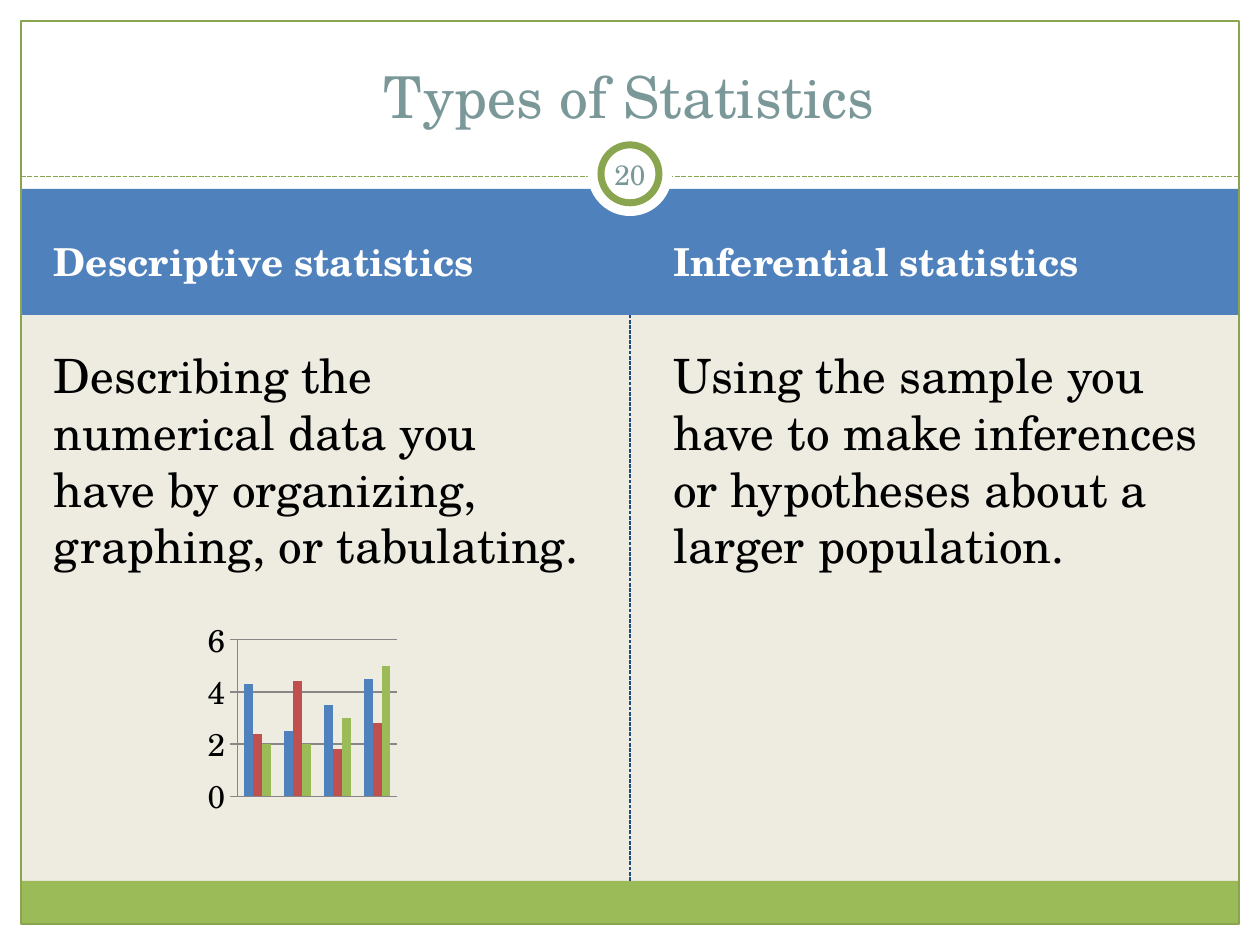
import dataclasses
import typing

import lxml.etree
import pptx
import pptx.chart.data
import pptx.dml.color
import pptx.enum.chart
import pptx.enum.dml
import pptx.enum.shapes
import pptx.enum.text
import pptx.oxml
import pptx.oxml.ns
import pptx.util

RGB = pptx.dml.color.RGBColor
Pt = pptx.util.Pt
Kind = pptx.enum.shapes.MSO_SHAPE
Align = pptx.enum.text.PP_ALIGN
Anchor = pptx.enum.text.MSO_ANCHOR

CREAM = RGB(0xEE, 0xEC, 0xE1)
WHITE = RGB(0xFF, 0xFF, 0xFF)
BLACK = RGB(0, 0, 0)
BLUE = RGB(0x4F, 0x81, 0xBD)
RED = RGB(0xC0, 0x50, 0x4D)
GREEN = RGB(0x9B, 0xBB, 0x59)
OLIVE = RGB(0x89, 0xA5, 0x4F)
NAVY = RGB(0x1F, 0x49, 0x7D)
TEAL = RGB(0x7B, 0x98, 0x99)
GREY = RGB(0x87, 0x87, 0x87)
FONT = "TeX Gyre Schola"

# The grid has 100 columns and 75 rows of square cells.
WIDE, HIGH = pptx.util.Inches(10), pptx.util.Inches(7.5)
COLS, ROWS = 100, 75
EDGE = 1.67
SPAN = COLS - 2 * EDGE
RULE, BAND, BODY, FOOT = 14, 15, 25, 69.9


@dataclasses.dataclass
class Box:
    col: float
    row: float
    cols: float
    rows: float

    def place(self) -> tuple[int, int, int, int]:
        return (col(self.col), row(self.row), col(self.cols), row(self.rows))


@dataclasses.dataclass
class Form:
    box: Box
    fill: typing.Optional[RGB] = None
    line: typing.Optional[RGB] = None
    width: float = 0.75
    kind: Kind = Kind.RECTANGLE


@dataclasses.dataclass
class Label:
    box: Box
    text: str
    size: float
    color: RGB
    bold: bool = False
    align: Align = Align.LEFT
    anchor: Anchor = Anchor.TOP
    inset: float = 1
    before: float = 0


def col(count: float) -> int:
    return round(WIDE * count / COLS)


def row(count: float) -> int:
    return round(HIGH * count / ROWS)


def ring(size: float, mid: float) -> Box:
    """Square centred across the slide, with its middle at row mid."""
    return Box((COLS - size) / 2, mid - size / 2, size, size)


def draw_form(slide, form: Form):
    shape = slide.shapes.add_shape(form.kind, *form.box.place())
    shape.shadow.inherit = False
    if form.fill is None:
        shape.fill.background()
    else:
        shape.fill.solid()
        shape.fill.fore_color.rgb = form.fill
    if form.line is None:
        shape.line.fill.background()
    else:
        shape.line.color.rgb = form.line
        shape.line.width = Pt(form.width)
    return shape


def draw_dash(slide, start: tuple, end: tuple, color: RGB, width: float):
    line = slide.shapes.add_connector(
        pptx.enum.shapes.MSO_CONNECTOR.STRAIGHT,
        col(start[0]), row(start[1]), col(end[0]), row(end[1]))
    line.line.color.rgb = color
    line.line.width = Pt(width)
    line.line.dash_style = pptx.enum.dml.MSO_LINE.SQUARE_DOT
    lxml.etree.SubElement(line.element.spPr, pptx.oxml.ns.qn("a:effectLst"))
    return line


def draw_label(slide, label: Label) -> None:
    frame = slide.shapes.add_textbox(*label.box.place()).text_frame
    frame.word_wrap = True
    frame.vertical_anchor = label.anchor
    frame.margin_left = frame.margin_right = col(label.inset)
    frame.margin_top = frame.margin_bottom = row(0.5)
    para = frame.paragraphs[0]
    para.alignment = label.align
    para.space_before = Pt(label.before)
    run = para.add_run()
    run.text = label.text
    run.font.name = FONT
    run.font.size = Pt(label.size)
    run.font.bold = label.bold
    run.font.color.rgb = label.color


def draw_chart(slide, box: Box, plot: Box) -> None:
    """Add the column chart; plot gives the inner plot area as shares of box."""
    data = pptx.chart.data.CategoryChartData()
    data.categories = ["1", "2", "3", "4"]
    data.add_series("Series 1", (4.3, 2.5, 3.5, 4.5))
    data.add_series("Series 2", (2.4, 4.4, 1.8, 2.8))
    data.add_series("Series 3", (2, 2, 3, 5))
    chart = slide.shapes.add_chart(
        pptx.enum.chart.XL_CHART_TYPE.COLUMN_CLUSTERED, *box.place(), data).chart
    chart.has_legend = chart.has_title = False
    chart.font.name = FONT
    chart.font.size = Pt(18)
    chart.font.color.rgb = BLACK
    chart.category_axis.visible = False
    axis = chart.value_axis
    axis.minimum_scale, axis.maximum_scale, axis.major_unit = 0, 6, 2
    axis.major_tick_mark = pptx.enum.chart.XL_TICK_MARK.OUTSIDE
    axis.has_major_gridlines = True
    for line in (axis.format.line, axis.major_gridlines.format.line):
        line.color.rgb = GREY
        line.width = Pt(0.75)
    bars = chart.plots[0]
    bars.gap_width = 150
    bars.vary_by_categories = False
    for series, color in zip(bars.series, (BLUE, RED, GREEN)):
        series.format.fill.solid()
        series.format.fill.fore_color.rgb = color
    area = chart.element.chart.plotArea
    for old in area.findall(pptx.oxml.ns.qn("c:layout")):
        area.remove(old)
    area.insert(0, pptx.oxml.parse_xml(
        f'<c:layout {pptx.oxml.ns.nsdecls("c")}><c:manualLayout>'
        '<c:layoutTarget val="inner"/><c:xMode val="edge"/><c:yMode val="edge"/>'
        f'<c:x val="{plot.col}"/><c:y val="{plot.row}"/>'
        f'<c:w val="{plot.cols}"/><c:h val="{plot.rows}"/>'
        '</c:manualLayout></c:layout>'))


def main() -> None:
    deck = pptx.Presentation()
    deck.slide_width, deck.slide_height = WIDE, HIGH
    slide = deck.slides.add_slide(deck.slide_layouts[6])
    slide.background.fill.solid()
    slide.background.fill.fore_color.rgb = CREAM

    for box in (Box(0, 0, COLS, 15.8), Box(0, ROWS - EDGE, COLS, EDGE),
                Box(0, 0, EDGE, ROWS), Box(COLS - EDGE, 0, EDGE, ROWS)):
        draw_form(slide, Form(box, WHITE))
    band = draw_form(slide, Form(Box(EDGE, BAND, SPAN, BODY - BAND), BLUE))
    foot = draw_form(slide, Form(Box(EDGE, FOOT, SPAN, ROWS - EDGE - FOOT), GREEN))
    split = draw_dash(slide, (COLS / 2, FOOT), (COLS / 2, BODY), NAVY, 0.75)
    split.begin_connect(foot, 0)
    split.end_connect(band, 2)
    draw_dash(slide, (EDGE, RULE), (COLS - EDGE, RULE), OLIVE, 0.9)
    draw_form(slide, Form(Box(EDGE, EDGE, SPAN, ROWS - 2 * EDGE), None, OLIVE))
    draw_form(slide, Form(ring(6.7, 13.8), WHITE, kind=Kind.OVAL))
    draw_form(slide, Form(ring(4.6, 13.8), WHITE, OLIVE, 4, Kind.OVAL))

    sides = (
        ("Descriptive statistics", "Describing the numerical data you have by "
         "organizing, graphing, or tabulating."),
        ("Inferential statistics", "Using the sample you have to make inferences "
         "or hypotheses about a larger population."))
    for left, (head, text) in zip((3.3, 52.45), sides):
        draw_label(slide, Label(Box(left, 16.7, 44.2, 8), head, 22, WHITE, True,
                                anchor=Anchor.MIDDLE, before=4.4))
        draw_label(slide, Label(Box(left, 27, 44.2, 41.8), text, 27, BLACK, before=5.4))
    draw_label(slide, Label(Box(3.3, 2.5, 93.3, 8.3), "Types of Statistics", 33, TEAL,
                            align=Align.CENTER, anchor=Anchor.BOTTOM))
    draw_label(slide, Label(Box(47.5, 11.4, 5, 4.8), "20", 16, TEAL,
                            align=Align.CENTER, anchor=Anchor.MIDDLE, inset=0.5))
    draw_chart(slide, Box(-12.5, 45, 66.7, 44.4), Box(0.47, 0.13, 0.19, 0.28))
    deck.save("out.pptx")


if __name__ == "__main__":
    main()
